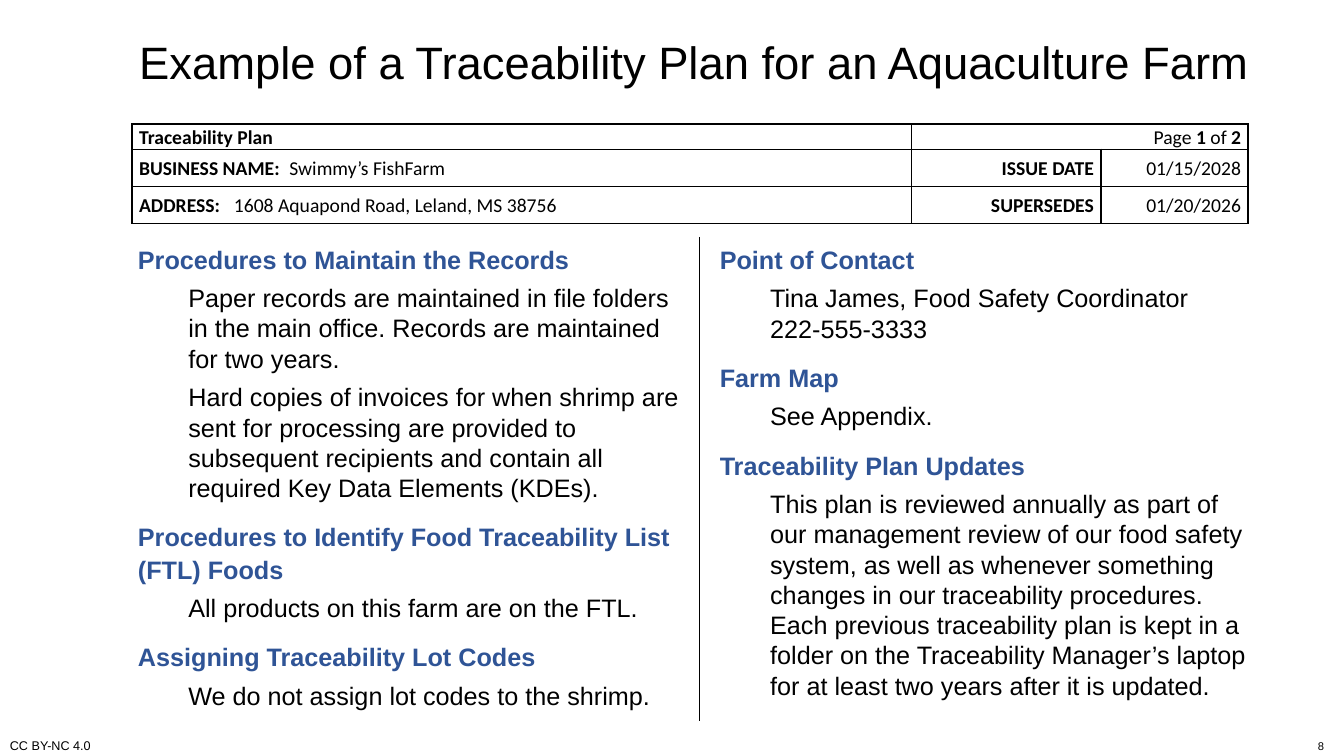
from lxml import etree
from pptx import Presentation
from pptx.dml.color import RGBColor
from pptx.enum.shapes import MSO_CONNECTOR
from pptx.enum.text import MSO_ANCHOR, MSO_AUTO_SIZE, PP_ALIGN
from pptx.oxml.ns import qn
from pptx.util import Emu, Pt

LEFT, RIGHT = PP_ALIGN.LEFT, PP_ALIGN.RIGHT
MIDDLE, BOTTOM, TOP = MSO_ANCHOR.MIDDLE, MSO_ANCHOR.BOTTOM, MSO_ANCHOR.TOP
PX = 9144  # 100 px to the inch
BLACK, BLUE, WHITE = "000000", "2F5496", "FFFFFF"

# Content
TITLE = "Example of a Traceability Plan for an Aquaculture Farm"
LICENCE, PAGE_NUMBER = "CC BY-NC 4.0", "8"

# Each cell is a list of (text, bold) spans
PLAN_ROWS = [
    [[("Traceability Plan", True)],
     [("Page ", False), ("1 ", True), ("of ", False), ("2", True)],
     []],
    [[("BUSINESS NAME:", True), ("\tSwimmy’s FishFarm", False)],
     [("ISSUE DATE", True)],
     [("01/15/2028", False)]],
    [[("ADDRESS:", True), ("\t1608 Aquapond Road, Leland, MS 38756", False)],
     [("SUPERSEDES", True)],
     [("01/20/2026", False)]],
]
ROW_TABS = [None, 149, 94]
COLUMN_WIDTHS = [773, 188, 146]
ROW_HEIGHTS = [25, 37, 37]

# Each section is (heading, body paragraphs)
LEFT_SECTIONS = [
    ("Procedures to Maintain the Records", [
        "Paper records are maintained in file folders in the main office. "
        "Records are maintained for two years.",
        "Hard copies of invoices for when shrimp are sent for processing are "
        "provided to subsequent recipients and contain all required Key Data "
        "Elements (KDEs)."]),
    ("Procedures to Identify Food Traceability List (FTL) Foods",
     ["All products on this farm are on the FTL."]),
    ("Assigning Traceability Lot Codes",
     ["We do not assign lot codes to the shrimp."]),
]
RIGHT_SECTIONS = [
    ("Point of Contact",
     ["Tina James, Food Safety Coordinator\n222-555-3333"]),
    ("Farm Map", ["See Appendix."]),
    ("Traceability Plan Updates", [
        "This plan is reviewed annually as part of our management review of "
        "our food safety system, as well as whenever something changes in our "
        "traceability procedures. Each previous traceability plan is kept in "
        "a folder on the Traceability Manager’s laptop for at least two years "
        "after it is updated."]),
]
COLUMNS = [((127, 235, 566, 480), LEFT_SECTIONS),
           ((704, 235, 551, 469), RIGHT_SECTIONS)]


def px(*lengths):
    return [Emu(length * PX) for length in lengths]


def colour(value):
    return RGBColor.from_string(value)


def write(para, text, size=18, font="Arial", color=BLACK, bold=False,
          align=LEFT):
    para.alignment = align
    for index, line in enumerate(text.split("\n")):
        if index:
            para.add_line_break()
        span = para.add_run()
        span.text = line
        span.font.size = Pt(size)
        span.font.name = font
        span.font.bold = bold
        span.font.color.rgb = colour(color)


def add_box(page, place, anchor=TOP):
    frame = page.shapes.add_textbox(*px(*place)).text_frame
    frame.word_wrap = True
    frame.vertical_anchor = anchor
    return frame


def add_tab_stop(para, position):
    tabs = etree.SubElement(para._p.get_or_add_pPr(), qn("a:tabLst"))
    etree.SubElement(tabs, qn("a:tab"), pos=str(position * PX), algn="l")


def set_borders(cell, widths):
    properties = cell._tc.get_or_add_tcPr()
    for side, width in widths.items():
        line = etree.SubElement(properties, qn("a:ln" + side),
                                w=str(Pt(width)))
        fill = etree.SubElement(line, qn("a:solidFill"))
        etree.SubElement(fill, qn("a:srgbClr"), val=BLACK)


def add_plan_table(page):
    place = px(131, 123, sum(COLUMN_WIDTHS), sum(ROW_HEIGHTS))
    table = page.shapes.add_table(3, 3, *place).table
    table.first_row = table.horz_banding = False
    for column, width in zip(table.columns, px(*COLUMN_WIDTHS)):
        column.width = width
    for row, height in zip(table.rows, px(*ROW_HEIGHTS)):
        row.height = height
    table.cell(0, 1).merge(table.cell(0, 2))
    for r, row in enumerate(PLAN_ROWS):
        for c, spans in enumerate(row):
            cell = table.cell(r, c)
            reaches_right = c == 2 or (r, c) == (0, 1)
            set_borders(cell, {"L": 1 if c else 1.5,
                               "R": 1.5 if reaches_right else 1,
                               "T": 1 if r else 1.5, "B": 1})
            cell.fill.solid()
            cell.fill.fore_color.rgb = colour(WHITE)
            cell.margin_left, cell.margin_right = px(7, 7)
            cell.margin_top = cell.margin_bottom = 0
            cell.vertical_anchor = MIDDLE
            para = cell.text_frame.paragraphs[0]
            if c == 0 and ROW_TABS[r]:
                add_tab_stop(para, ROW_TABS[r])
            para.line_spacing = 1.06
            for text, bold in spans:
                write(para, text, size=14, font="Calibri", bold=bold,
                      align=RIGHT if c else LEFT)


def add_sections(page, place, sections):
    frame = add_box(page, place)
    for index, (heading, bodies) in enumerate(sections):
        para = frame.add_paragraph() if index else frame.paragraphs[0]
        para.line_spacing = 1.07
        para.space_before = Pt(6 if index else 0)
        para.space_after = Pt(6)
        write(para, heading, color=BLUE, bold=True)
        for body in bodies:
            para = frame.add_paragraph()
            para._p.get_or_add_pPr().set("marL", str(50 * PX))
            para.space_after = Pt(6)
            write(para, body)


def main():
    deck = Presentation()
    deck.slide_width, deck.slide_height = px(1333, 750)
    page = deck.slides.add_slide(deck.slide_layouts[5])

    # Title
    title = page.shapes.title
    title.left, title.top, title.width, title.height = px(128, 0, 1150, 121)
    title.text_frame.auto_size = MSO_AUTO_SIZE.NONE
    title.text_frame.vertical_anchor = MIDDLE
    write(title.text_frame.paragraphs[0], TITLE, size=32.4)

    # Plan header and the two text columns
    add_plan_table(page)
    for place, sections in COLUMNS:
        add_sections(page, place, sections)

    # Divider
    divider = page.shapes.add_connector(MSO_CONNECTOR.STRAIGHT,
                                        *px(694, 235, 694, 715))
    divider.line.color.rgb = colour(BLACK)
    divider.line.width = Pt(1)
    etree.SubElement(divider._element.spPr, qn("a:effectLst"))

    # Footer
    licence = add_box(page, (0, 731, 277, 21), BOTTOM)
    write(licence.paragraphs[0], LICENCE, size=9)
    number = add_box(page, (1012, 729, 311, 23), BOTTOM)
    write(number.paragraphs[0], PAGE_NUMBER, size=8, align=RIGHT)

    deck.save("out.pptx")


if __name__ == "__main__":
    main()
